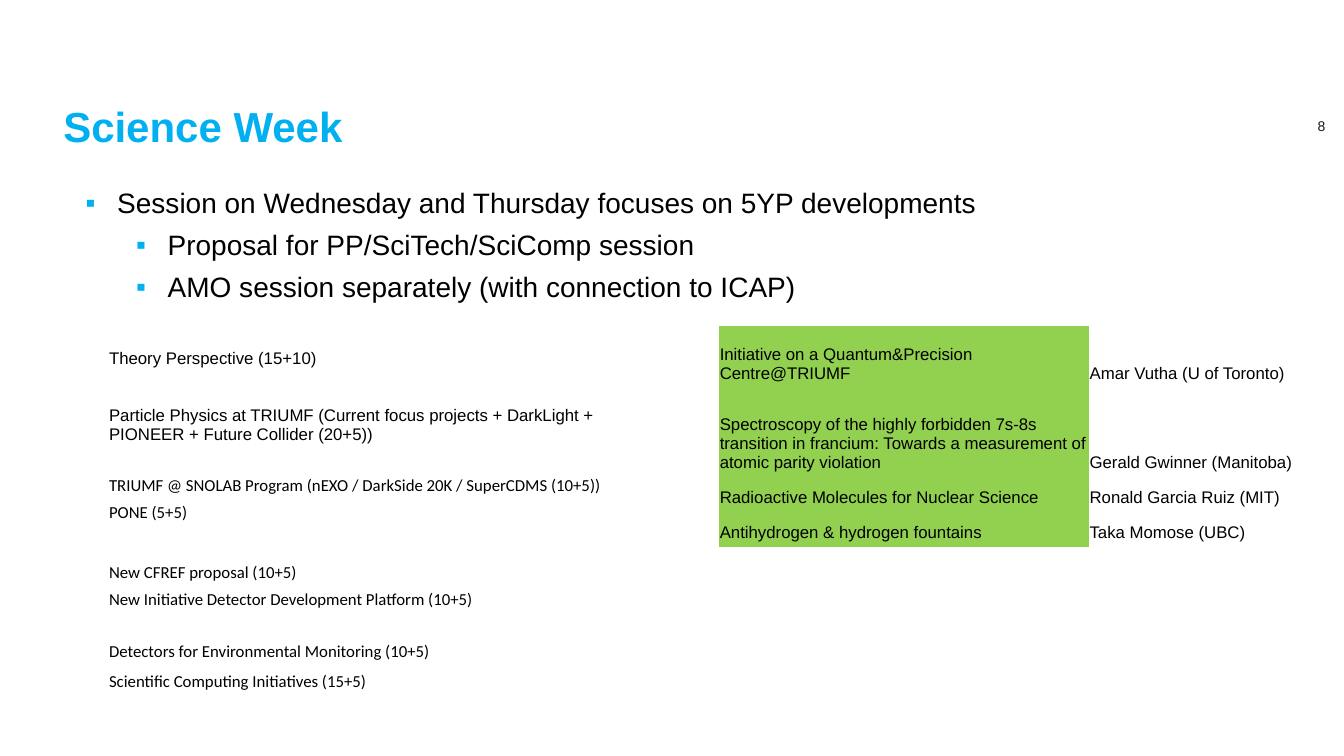
"""Build the Science Week slide with its two session tables."""
from dataclasses import dataclass
from typing import Any

import pptx
import pptx.dml.color
import pptx.enum.text
import pptx.oxml
import pptx.oxml.ns
import pptx.util
from lxml import etree

Pt = pptx.util.Pt
Align = pptx.enum.text.PP_ALIGN
Anchor = pptx.enum.text.MSO_ANCHOR
Fit = pptx.enum.text.MSO_AUTO_SIZE
qn = pptx.oxml.ns.qn

HUES = {"blue": "00B0F0", "black": "000000", "dark": "181717", "green": "92D050"}
PLAIN = "{2D5ABB26-0587-4C30-8999-92F81FD0307C}"
CELL = {
    "vertical_anchor": Anchor.BOTTOM,
    "margin_left": Pt(0.72),
    "margin_right": Pt(0.72),
    "margin_top": Pt(0.72),
    "margin_bottom": Pt(3.6),
}


@dataclass
class Style:
    """Font of a piece of text."""

    size: float
    hue: str = "black"
    bold: bool = False
    face: str = "Arial"


@dataclass
class Label:
    """Text box or placeholder with its format."""

    lines: list[str]
    box: tuple[float, float, float, float]
    style: Style
    frame: dict[str, Any]
    para: dict[str, Any]


@dataclass
class Row:
    """Table row with its height and font face."""

    height: float
    texts: list[str]
    face: str = "Arial"


@dataclass
class Grid:
    """Table with its columns and their fills."""

    left: float
    top: float
    widths: list[float]
    fills: list[str | None]
    rows: list[Row]


def apply(item: Any, values: dict[str, Any]) -> None:
    """Set each named attribute on the item."""
    for name, value in values.items():
        setattr(item, name, value)


def paint(font: Any, style: Style) -> None:
    """Give a font its face, size and colour."""
    apply(font, {"name": style.face, "size": Pt(style.size), "bold": style.bold})
    font.color.rgb = pptx.dml.color.RGBColor.from_string(HUES[style.hue])


def write(shape: Any, label: Label) -> None:
    """Place a shape and fill it with the label's lines."""
    sides = ("left", "top", "width", "height")
    apply(shape, {side: Pt(size) for side, size in zip(sides, label.box)})
    frame = shape.text_frame
    apply(frame, {"word_wrap": True, "auto_size": Fit.NONE,
                  "vertical_anchor": Anchor.TOP, **label.frame})
    for place, text in enumerate(label.lines):
        para = frame.add_paragraph() if place else frame.paragraphs[0]
        apply(para, {"alignment": Align.LEFT, "space_before": Pt(0), **label.para})
        run = para.add_run()
        run.text = text
        paint(run.font, label.style)


def bullet(para: Any, level: int) -> None:
    """Add a blue square bullet and a hanging indent."""
    apply(para, {"level": level})
    props = para._p.get_or_add_pPr()
    props.set("marL", str(Pt(22.5 + 36 * level)))
    props.set("indent", str(Pt(-22.5)))
    tint = etree.SubElement(props, qn("a:buClr"))
    etree.SubElement(tint, qn("a:srgbClr"), val=HUES["blue"])
    etree.SubElement(props, qn("a:buFont"), typeface="Arial")
    etree.SubElement(props, qn("a:buChar"), char="▪")


def draw(slide: Any, grid: Grid) -> None:
    """Draw a table without borders."""
    high = sum(row.height for row in grid.rows)
    frame = slide.shapes.add_table(len(grid.rows), len(grid.widths), Pt(grid.left),
                                   Pt(grid.top), Pt(sum(grid.widths)), Pt(high))
    table = frame.table
    apply(table, {"first_row": False, "horz_banding": False})
    frame.element.find(".//" + qn("a:tableStyleId")).text = PLAIN
    for col, width in zip(table.columns, grid.widths):
        col.width = Pt(width)
    for line, row in zip(table.rows, grid.rows):
        line.height = Pt(row.height)
        for cell, text, fill in zip(line.cells, row.texts, grid.fills):
            apply(cell, CELL)
            if fill:
                cell.fill.solid()
                cell.fill.fore_color.rgb = pptx.dml.color.RGBColor.from_string(HUES[fill])
            else:
                cell.fill.background()
            para = cell.text_frame.paragraphs[0]
            if text:
                run = para.add_run()
                run.text = text
                paint(run.font, Style(12, face=row.face))
            else:
                etree.SubElement(para._p, qn("a:endParaRPr"), sz="1200")


TITLE = Label(["Science Week"], (38, 72, 830, 54), Style(30, "blue", True),
              {}, {"line_spacing": 0.9})
BODY = Label(["Session on Wednesday and Thursday focuses on 5YP developments",
              "Proposal for PP/SciTech/SciComp session",
              "AMO session separately (with connection to ICAP)"],
             (54, 129.2, 851.8, 116.6), Style(20), {}, {})
PAGE = Label(["8"], (900, 77, 50.4, 25.2), Style(10, "dark"),
             {"vertical_anchor": Anchor.MIDDLE, "margin_right": Pt(3.6)},
             {"alignment": Align.RIGHT})
GRIDS = [
    Grid(77.2, 245.2, [375.8], [None], [
        Row(21.4, ["Theory Perspective (15+10)"]),
        Row(54, ["Particle Physics at TRIUMF (Current focus projects + DarkLight + "
                 "PIONEER + Future Collider (20+5))"]),
        Row(37.4, ["TRIUMF @ SNOLAB Program (nEXO / DarkSide 20K / SuperCDMS (10+5))"],
            "Calibri"),
        Row(19, ["PONE (5+5)"], "Calibri"),
        Row(21.6, [""]),
        Row(21.6, ["New CFREF proposal (10+5)"], "Calibri"),
        Row(18.4, ["New Initiative Detector Development Platform (10+5)"], "Calibri"),
        Row(37.4, ["Detectors for Environmental Monitoring (10+5)"], "Calibri"),
        Row(21.6, ["Scientific Computing Initiatives (15+5)"], "Calibri"),
    ]),
    Grid(513.4, 233.2, [264.2, 356.4], ["green", None], [
        Row(43.9, ["Initiative on a Quantum&Precision Centre@TRIUMF",
                   "Amar Vutha (U of Toronto)"]),
        Row(63.4, ["Spectroscopy of the highly forbidden 7s-8s transition in francium: "
                   "Towards a measurement of atomic parity violation",
                   "Gerald Gwinner (Manitoba)"]),
        Row(25.2, ["Radioactive Molecules for Nuclear Science", "Ronald Garcia Ruiz (MIT)"]),
        Row(25.2, ["Antihydrogen & hydrogen fountains", "Taka Momose (UBC)"]),
    ]),
]


def main() -> None:
    """Build and save the deck."""
    deck = pptx.Presentation()
    apply(deck, {"slide_width": Pt(960), "slide_height": Pt(540)})
    slide = deck.slides.add_slide(deck.slide_layouts[1])
    write(slide.shapes.title, TITLE)
    body = slide.placeholders[1]
    write(body, BODY)
    for place, para in enumerate(body.text_frame.paragraphs):
        bullet(para, min(place, 1))
        para.space_before = Pt(6 if place else 0)
    write(slide.shapes.add_textbox(0, 0, 0, 0), PAGE)
    for grid in GRIDS:
        draw(slide, grid)
    deck.save("out.pptx")


if __name__ == "__main__":
    main()
